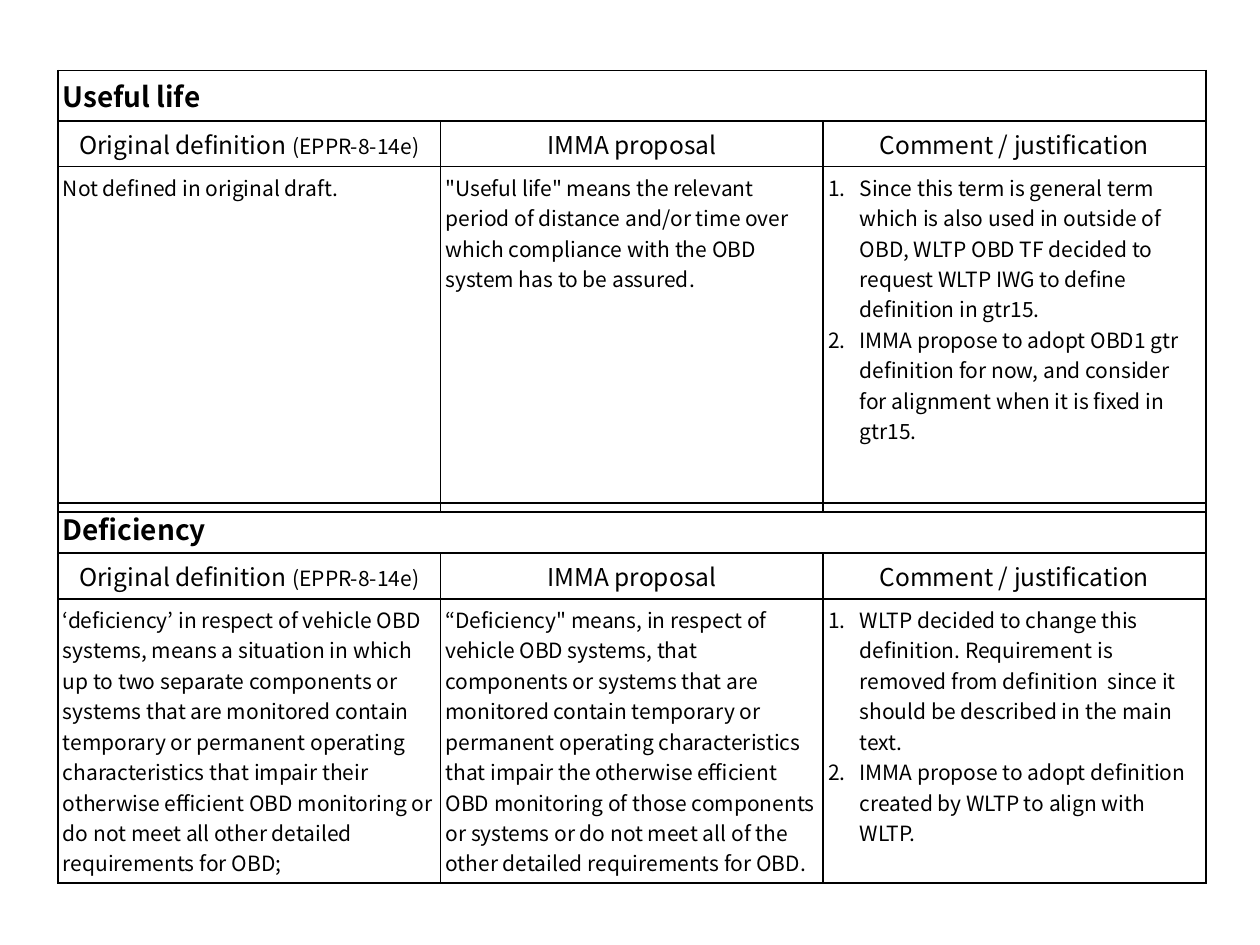
from lxml.etree import SubElement
from pptx import Presentation
from pptx.dml.color import RGBColor
from pptx.enum.text import PP_ALIGN as Align
from pptx.oxml.ns import qn
from pptx.util import Inches, Pt

HEADINGS = [
    [("Original definition ", 14), ("(EPPR-8-14e)", 12)],
    [("IMMA proposal", 14)],
    [("Comment / justification", 14)],
]

USEFUL_LIFE = [
    "Not defined in original draft.",
    '"Useful life" means the relevant period of distance and/or time over which '
    "compliance with the OBD system has to be assured.",
    [
        "Since this term is general term which is also used in outside of OBD, "
        "WLTP OBD TF decided to request WLTP IWG to define definition in gtr15.",
        "IMMA propose to adopt OBD1 gtr definition for now, and consider for "
        "alignment when it is fixed in gtr15.",
    ],
]

DEFICIENCY = [
    "‘deficiency’ in respect of vehicle OBD systems, means a situation in which up "
    "to two separate components or systems that are monitored contain temporary or "
    "permanent operating characteristics that impair their otherwise efficient OBD "
    "monitoring or do not meet all other detailed requirements for OBD;",
    '“Deficiency" means, in respect of vehicle OBD systems, that components or '
    "systems that are monitored contain temporary or permanent operating "
    "characteristics that impair the otherwise efficient OBD monitoring of those "
    "components or systems or do not meet all of the other detailed requirements "
    "for OBD.",
    [
        "WLTP decided to change this definition. Requirement is removed from "
        "definition  since it should be described in the main text.",
        "IMMA propose to adopt definition created by WLTP to align with WLTP.",
    ],
]


def color(value):
    return RGBColor.from_string(value)


class DefinitionPage:
    font = "Noto Sans CJK JP"
    ink = "000000"
    left, width = 0.46, 9.11
    margin = 0.04
    indent = 0.25

    def __init__(self, deck):
        self.page = deck.slides.add_slide(deck.slide_layouts[6])

    def span(self, para, text, size, bold=False):
        run = para.add_run()
        run.text = text
        font = run.font
        font.name, font.size, font.bold = self.font, Pt(size), bold
        font.color.rgb = color(self.ink)
        SubElement(font._element, qn("a:ea"), typeface=self.font)

    def number(self, para):
        """Give the paragraph an automatic number with a hanging indent."""
        props = para._p.get_or_add_pPr()
        props.set("marL", str(Inches(self.indent)))
        props.set("indent", str(-Inches(self.indent)))
        SubElement(props, qn("a:buFont"), typeface="+mj-lt")
        SubElement(props, qn("a:buAutoNum"), type="arabicPeriod")

    def frame_cell(self, cell):
        """Set margins, thin borders on all sides and no fill."""
        cell.margin_left = cell.margin_right = Inches(self.margin)
        cell.margin_top = cell.margin_bottom = Inches(self.margin)
        props = cell._tc.get_or_add_tcPr()
        for side in ("lnL", "lnR", "lnT", "lnB"):
            line = SubElement(props, qn(f"a:{side}"), w=str(Pt(1)))
            fill = SubElement(line, qn("a:solidFill"))
            SubElement(fill, qn("a:srgbClr"), val=self.ink)
        cell.fill.background()

    def body(self, cell, content):
        if isinstance(content, str):
            self.span(cell.text_frame.paragraphs[0], content, 12)
            return
        for index, item in enumerate(content):
            frame = cell.text_frame
            para = frame.add_paragraph() if index else frame.paragraphs[0]
            self.number(para)
            self.span(para, item, 12)

    def definition_table(self, term, contents, top, body_height):
        heights = (0.4, 0.36, body_height)
        table = self.page.shapes.add_table(
            3, 3, Inches(self.left), Inches(top),
            Inches(self.width), Inches(sum(heights))).table
        table.first_row = table.horz_banding = False
        for row, height in zip(table.rows, heights):
            row.height = Inches(height)
        for cell in table.iter_cells():
            self.frame_cell(cell)

        title = table.cell(0, 0)
        title.merge(table.cell(0, 2))
        self.span(title.text_frame.paragraphs[0], term, 16, bold=True)
        for column, (heading, content) in enumerate(zip(HEADINGS, contents)):
            para = table.cell(1, column).text_frame.paragraphs[0]
            para.alignment = Align.CENTER
            for text, size in heading:
                self.span(para, text, size)
            self.body(table.cell(2, column), content)


def main():
    deck = Presentation()
    deck.slide_width, deck.slide_height = Inches(10), Inches(7.5)
    page = DefinitionPage(deck)
    page.definition_table("Useful life", USEFUL_LIFE, 0.56, 2.74)
    page.definition_table("Deficiency", DEFICIENCY, 3.99, 2.25)
    deck.save("out.pptx")


if __name__ == "__main__":
    main()
